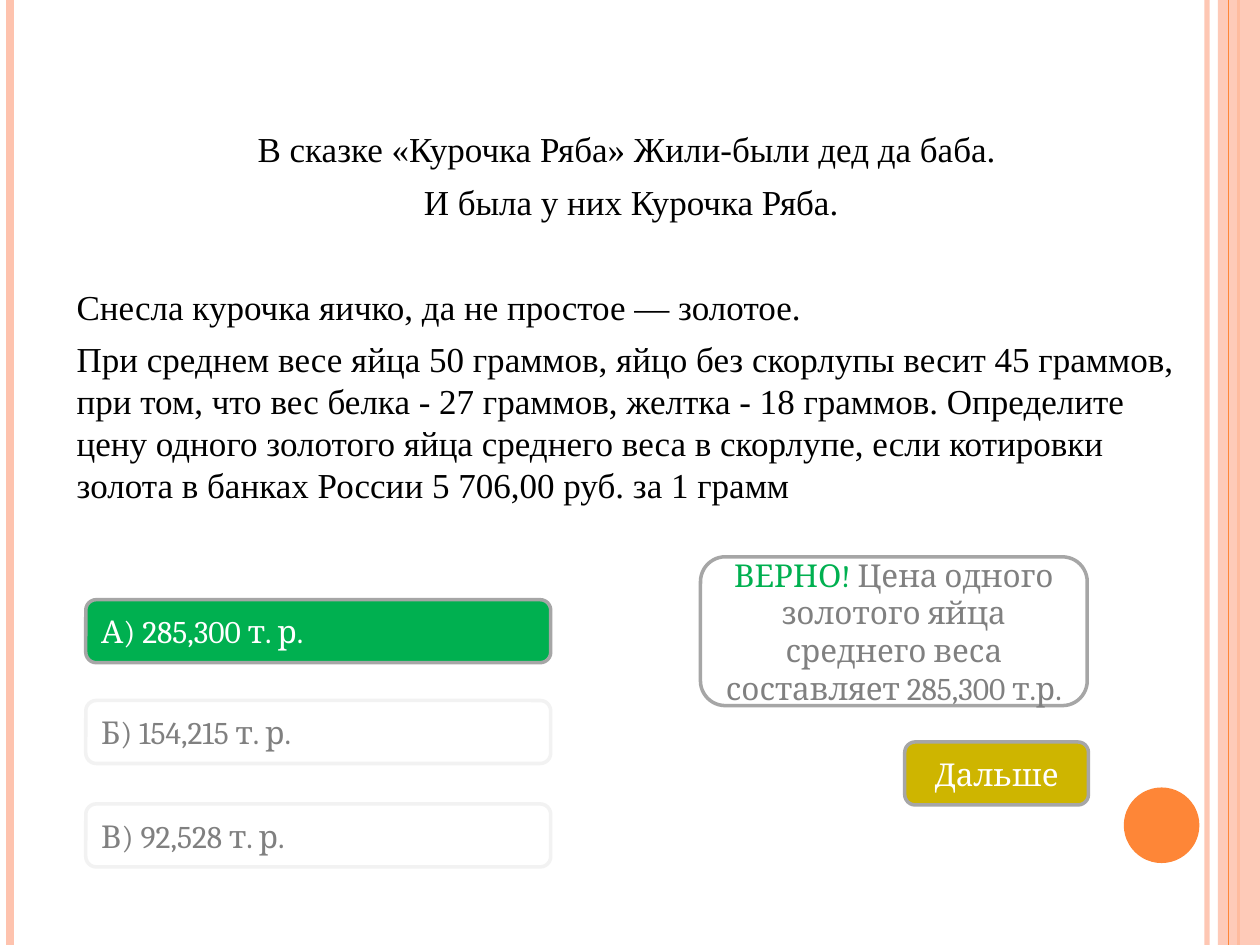
from lxml import etree
from pptx import Presentation
from pptx.dml.color import RGBColor
from pptx.enum.shapes import MSO_CONNECTOR as CONN, MSO_SHAPE as SHAPE
from pptx.enum.text import MSO_ANCHOR as ANCHOR, PP_ALIGN as ALIGN
from pptx.oxml.ns import qn
from pptx.util import Pt

WIDTH, HEIGHT = 720, 540
ORANGE, PEACH, GREEN, GOLD = "FE8637", "FEC3AE", "00B050", "CEB500"
WHITE, BLACK, GREY, EDGE, PALE = "FFFFFF", "000000", "808080", "A6A6A6", "F2F2F2"

STORY = [
    ("В сказке «Курочка Ряба» Жили-были дед да баба. ", ALIGN.CENTER, 0),
    ("И была у них Курочка Ряба.", ALIGN.CENTER, 6),
    ("Снесла курочка яичко, да не простое — золотое.", ALIGN.LEFT, 36),
    ("При среднем весе яйца 50 граммов, яйцо без скорлупы весит 45 граммов, "
     "при том, что вес белка - 27 граммов, желтка - 18 граммов. Определите "
     "цену одного золотого яйца среднего веса в скорлупе, если котировки "
     "золота в банках России 5 706,00 руб. за 1 грамм", ALIGN.LEFT, 6),
]
ANSWERS = [
    ("А) 285,300 т. р.", 342.7, GREEN, EDGE, WHITE),
    ("Б) 154,215 т. р.", 400.3, WHITE, PALE, GREY),
    ("В) 92,528 т. р.", 459.4, WHITE, PALE, GREY),
]
RULES = [(689.8, PEACH, 3, 93), (5.8, PEACH, 4.5, 100),
         (707.8, ORANGE, 1.5, 100), (702, ORANGE, 0.75, 100)]


def rgb(value):
    """Turn a hex string into a colour."""
    return RGBColor.from_string(value)


def set_all(obj, values):
    """Set every attribute in a dict of format values."""
    for name, value in values.items():
        setattr(obj, name, value)


def set_alpha(element, percent):
    """Make the first solid colour inside an element see-through."""
    colour = next(element.iter(qn("a:srgbClr")))
    etree.SubElement(colour, qn("a:alpha")).set("val", str(percent * 1000))


def add_rule(slide, x, colour, width, alpha):
    """Draw a full-height vertical line."""
    s = slide.shapes.add_connector(CONN.STRAIGHT, Pt(x), 0, Pt(x), Pt(HEIGHT))
    s.line.color.rgb = rgb(colour)
    s.line.width = Pt(width)
    if alpha < 100:
        set_alpha(s.line._get_or_add_ln(), alpha)
    etree.SubElement(s._element.spPr, qn("a:effectLst"))


def add_shape(slide, kind, box, fill, edge=None):
    """Add a flat filled shape, outlined if an edge colour is given."""
    s = slide.shapes.add_shape(kind, *map(Pt, box))
    s.shadow.inherit = False
    s.fill.solid()
    s.fill.fore_color.rgb = rgb(fill)
    if edge:
        s.line.color.rgb = rgb(edge)
        s.line.width = Pt(2)
    else:
        s.line.fill.background()
    return s


def add_run(p, text, font, size, colour):
    """Append a formatted run to a paragraph."""
    r = p.add_run()
    r.text = text
    set_all(r.font, {"name": font, "size": Pt(size)})
    r.font.color.rgb = rgb(colour)


def add_card(slide, box, fill, edge, runs, align=ALIGN.CENTER):
    """Add a rounded box holding one paragraph of coloured runs."""
    tf = add_shape(slide, SHAPE.ROUNDED_RECTANGLE, box, fill, edge).text_frame
    set_all(tf, {"word_wrap": True, "vertical_anchor": ANCHOR.MIDDLE})
    p = tf.paragraphs[0]
    p.alignment = align
    for text, colour in runs:
        add_run(p, text, "Cambria", 18, colour)


def add_story(slide):
    """Add the text of the problem."""
    tf = slide.shapes.add_textbox(*map(Pt, (36.7, 69.4, 648, 328.6))).text_frame
    tf.word_wrap = True
    for i, (text, align, gap) in enumerate(STORY):
        p = tf.add_paragraph() if i else tf.paragraphs[0]
        set_all(p, {"alignment": align, "space_before": Pt(gap),
                    "line_spacing": Pt(24)})
        add_run(p, text, "Times New Roman", 20, BLACK)


def add_frame(slide):
    """Draw the striped edges and the orange disc."""
    *lower, top = RULES
    for rule in lower:
        add_rule(slide, *rule)
    band = add_shape(slide, SHAPE.RECTANGLE, (696, 0, WIDTH - 696, HEIGHT), PEACH)
    set_alpha(band._element.spPr, 87)
    add_rule(slide, *top)
    add_shape(slide, SHAPE.OVAL, (642.2, 450, 43.2, 43.2), ORANGE)


def main():
    """Build and save the slide."""
    prs = Presentation()
    set_all(prs, {"slide_width": Pt(WIDTH), "slide_height": Pt(HEIGHT)})
    slide = prs.slides.add_slide(prs.slide_layouts[6])
    add_frame(slide)
    add_story(slide)
    for text, top, fill, edge, colour in ANSWERS:
        add_card(slide, (49, top, 265.7, 36), fill, edge, [(text, colour)], ALIGN.LEFT)
    add_card(slide, (400.3, 318.2, 221, 85), WHITE, EDGE, [
        ("ВЕРНО! ", GREEN),
        ("Цена одного золотого яйца среднего веса составляет 285,300 т.р.", GREY)])
    add_card(slide, (517, 424, 105, 36), GOLD, EDGE, [("Дальше", WHITE)])
    prs.save("out.pptx")


if __name__ == "__main__":
    main()
